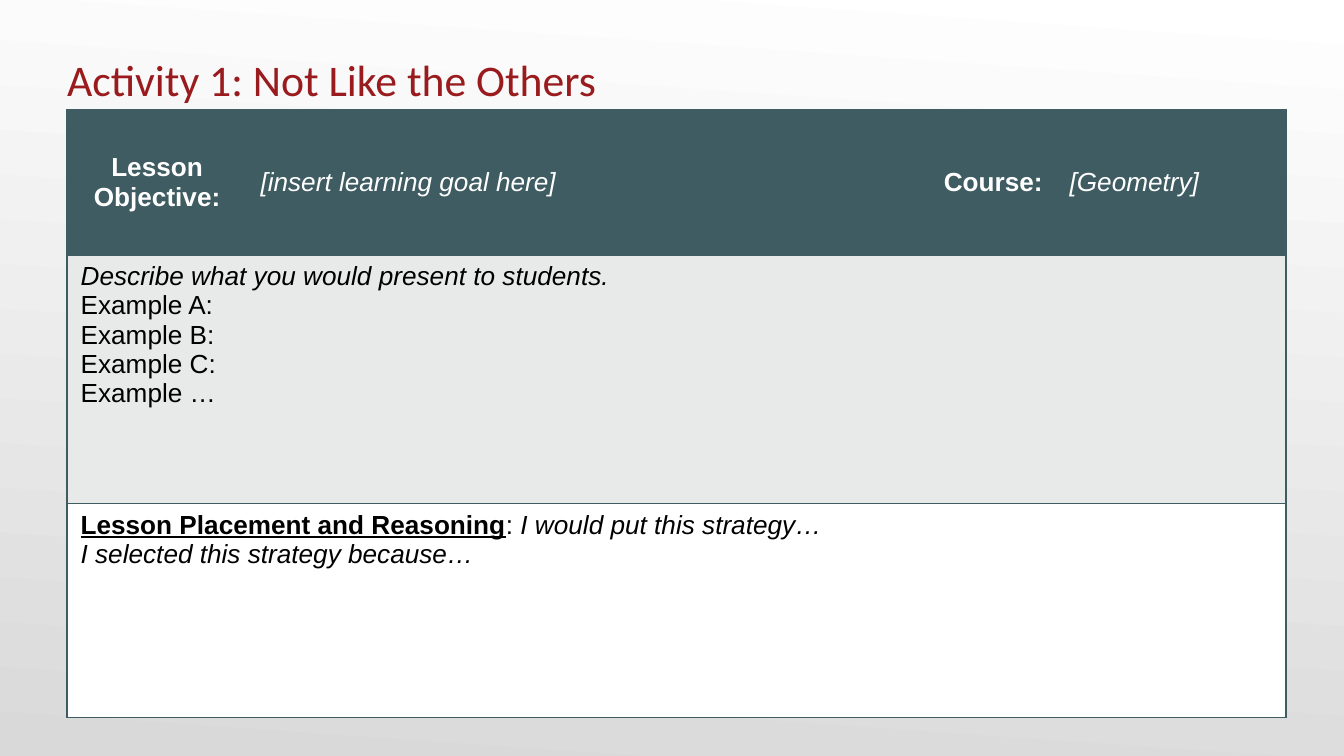
from lxml.etree import SubElement
from pptx import Presentation
from pptx.dml.color import RGBColor
from pptx.enum.text import MSO_ANCHOR, PP_ALIGN
from pptx.oxml.ns import qn
from pptx.util import Cm, Pt

COLORS = {
    "title": "991B1E", "teal": "3E5C61", "pale": "E8EAEA",
    "white": "FFFFFF", "black": "000000", "grey": "D9D9D9",
}
PLAIN = {"bold": False, "italic": False}
BOLD = {"bold": True, "italic": False}
ITALIC = {"bold": False, "italic": True}
HEADING = {**BOLD, "underline": True}

TITLE = "Activity 1: Not Like the Others"
HEADER = [
    ("Lesson Objective:", BOLD, PP_ALIGN.CENTER),
    ("[insert learning goal here]", ITALIC, PP_ALIGN.LEFT),
    ("Course:", BOLD, PP_ALIGN.RIGHT),
    ("[Geometry]", ITALIC, PP_ALIGN.LEFT),
]
# Each section is a list of lines, each line a list of (text, format)
PRESENTATION = [[("Describe what you would present to students.", ITALIC)]] + [
    [(f"Example {label}", PLAIN)] for label in ("A:", "B:", "C:", "…")
]
REASONING = [
    [
        ("Lesson Placement and Reasoning", HEADING),
        (": ", PLAIN),
        ("I would put this strategy…", ITALIC),
    ],
    [("I selected this strategy because…", ITALIC)],
]
SECTIONS = [(PRESENTATION, "pale"), (REASONING, "white")]

LEFT = Cm(1.27)
COLUMN_WIDTHS = [Cm(3.4), Cm(12.7), Cm(2.59), Cm(4.34)]
ROW_HEIGHTS = [Cm(2.74), Cm(4.7), Cm(4.04)]


def rgb(name):
    return RGBColor.from_string(COLORS[name])


def write_lines(frame, lines, color, size=14, face="Arial", align=PP_ALIGN.LEFT):
    for index, line in enumerate(lines):
        paragraph = frame.add_paragraph() if index else frame.paragraphs[0]
        paragraph.alignment = align
        for text, style in line:
            run = paragraph.add_run()
            run.text = text
            run.font.color.rgb = rgb(color)
            for name, value in {"name": face, "size": Pt(size), **style}.items():
                setattr(run.font, name, value)


def style_cell(cell, fill):
    """Outline all four sides, then fill; the schema wants that order."""
    properties = cell._tc.get_or_add_tcPr()
    for side in ("lnL", "lnR", "lnT", "lnB"):
        border = SubElement(properties, qn(f"a:{side}"), w=str(Pt(1)))
        solid = SubElement(border, qn("a:solidFill"))
        SubElement(solid, qn("a:srgbClr"), val=COLORS["teal"])
    cell.fill.solid()
    cell.fill.fore_color.rgb = rgb(fill)


def add_background(slide):
    fill = slide.background.fill
    fill.gradient()
    fill.gradient_angle = 266
    for stop, color in zip(fill.gradient_stops, ("white", "grey")):
        stop.color.rgb = rgb(color)


def add_title(slide):
    frame = slide.shapes.add_textbox(LEFT, Cm(0.86), Cm(22.86), Cm(1.12)).text_frame
    layout = {
        "word_wrap": True, "vertical_anchor": MSO_ANCHOR.BOTTOM,
        "margin_left": 0, "margin_right": 0, "margin_top": Cm(0.13), "margin_bottom": 0,
    }
    for name, value in layout.items():
        setattr(frame, name, value)
    write_lines(frame, [[(TITLE, PLAIN)]], "title", 23.4, "Calibri")


def add_lesson_table(slide):
    lesson = slide.shapes.add_table(
        len(ROW_HEIGHTS), len(COLUMN_WIDTHS), LEFT, Cm(2.08),
        sum(COLUMN_WIDTHS), sum(ROW_HEIGHTS),
    ).table
    lesson.first_row = lesson.horz_banding = False
    for column, width in zip(lesson.columns, COLUMN_WIDTHS):
        column.width = width
    fills = ["teal"] + [fill for _, fill in SECTIONS]
    for row, height, fill in zip(lesson.rows, ROW_HEIGHTS, fills):
        row.height = height
        for cell in row.cells:
            style_cell(cell, fill)

    for cell, (text, style, align) in zip(lesson.rows[0].cells, HEADER):
        cell.vertical_anchor = MSO_ANCHOR.MIDDLE
        write_lines(cell.text_frame, [[(text, style)]], "white", align=align)
    for row_index, (lines, _) in enumerate(SECTIONS, start=1):
        section = lesson.cell(row_index, 0)
        section.merge(lesson.cell(row_index, len(COLUMN_WIDTHS) - 1))
        write_lines(section.text_frame, lines, "black")


def main():
    deck = Presentation()
    deck.slide_width, deck.slide_height = Cm(25.4), Cm(14.29)
    slide = deck.slides.add_slide(deck.slide_layouts[6])
    add_background(slide)
    add_title(slide)
    add_lesson_table(slide)
    deck.save("out.pptx")


if __name__ == "__main__":
    main()
